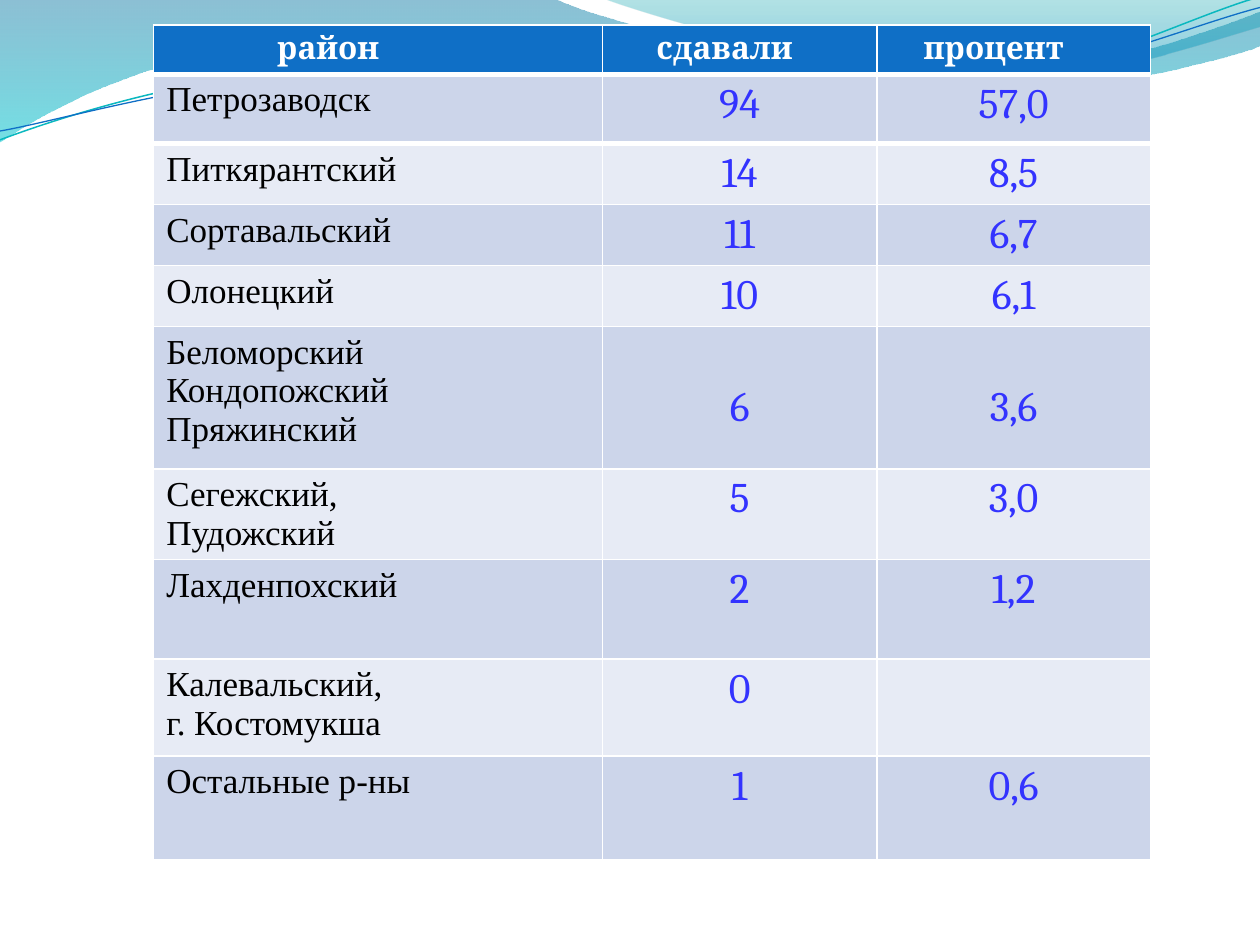
from dataclasses import dataclass
from math import cos, radians, sin
from typing import Optional

from lxml.etree import SubElement
from pptx import Presentation
from pptx.dml.color import RGBColor
from pptx.enum.text import PP_ALIGN
from pptx.oxml import parse_xml
from pptx.oxml.ns import nsdecls, qn
from pptx.util import Inches, Pt

WHITE = RGBColor(0xFF, 0xFF, 0xFF)
BLACK = RGBColor(0, 0, 0)
BLUE = RGBColor(0x0F, 0x6F, 0xC6)
TEAL = RGBColor(0x0A, 0xB8, 0xBF)
NUMBER = RGBColor(0x33, 0x33, 0xFF)
BANDS = (RGBColor(0xCC, 0xD5, 0xEA), RGBColor(0xE7, 0xEB, 0xF5))


@dataclass
class Stop:
    position: float
    color: RGBColor
    opacity: int


@dataclass
class Wave:
    start: tuple
    segments: list
    stops: tuple = ()
    line: Optional[RGBColor] = None
    width: float = 0
    rotation: float = 0
    center: tuple = (0, 0)


@dataclass
class District:
    names: str
    count: str
    percent: str
    height: float
    number_top: float = 0.05


WAVES = [
    Wave((0, 0), [
        (4.4, -0.01),
        (4.76, 0.17, 6.64, 0.63, 7.58, 0.63), (8.53, 0.63, 9.58, 0.26, 10, 0.09),
        (10.01, 0.36),
        (9.83, 0.44, 8.7, 0.76, 7.46, 0.75), (6.22, 0.75, 3.82, 0.28, 2.57, 0.34),
        (1.29, 0.36, 0.46, 0.83, -0.01, 1.13),
        (0, 0),
    ], stops=(Stop(0, RGBColor(0, 0x74, 0xA1), 45), Stop(1, RGBColor(0, 0xC6, 0xCF), 55))),
    Wave((4.79, -0.01), [
        (5.09, 0.11, 6.82, 0.62, 7.69, 0.65), (8.56, 0.69, 9.61, 0.32, 10, 0.21),
        (10, 0), (4.79, -0.01),
    ], stops=(Stop(0, RGBColor(0, 0xA1, 0xA9), 30), Stop(0.8, RGBColor(0, 0x8B, 0xBF), 45))),
    Wave((0, 1.11), [
        (0.48, 0.93, 1.58, 0.57, 2.77, 0.52), (3.95, 0.47, 5.93, 0.89, 7.13, 0.8),
        (8.33, 0.71, 9.38, 0.15, 9.98, -0.02),
    ], line=TEAL, width=0.85, rotation=357.3, center=(4.99, 0.58)),
    Wave((0, 1.04), [
        (0.47, 0.96, 1.64, 0.61, 2.83, 0.56), (4.03, 0.51, 5.97, 0.84, 7.17, 0.75),
        (8.36, 0.67, 9.41, 0.21, 10, 0.06),
    ], line=BLUE, width=0.75, rotation=357.3, center=(5, 0.59)),
]

COLUMN_WIDTHS = (3.56, 2.18, 2.17)
HEADERS = (("район", 0.98), ("сдавали", 0.43), ("процент", 0.37))
HEADER_HEIGHT = 0.39
DISTRICTS = [
    District("Петрозаводск", "94", "57,0", 0.55),
    District("Питкярантский", "14", "8,5", 0.48),
    District("Сортавальский", "11", "6,7", 0.48),
    District("Олонецкий", "10", "6,1", 0.48),
    District("Беломорский\nКондопожский\nПряжинский", "6", "3,6", 1.13, 0.45),
    District("Сегежский,\nПудожский", "5", "3,0", 0.72),
    District("Лахденпохский", "2", "1,2", 0.79),
    District("Калевальский,\nг. Костомукша", "0", "", 0.77),
    District("Остальные р-ны", "1", "0,6", 0.82),
]


def unrotated(wave: Wave, x: float, y: float) -> tuple:
    angle = radians(-wave.rotation)
    cx, cy = wave.center
    dx, dy = x - cx, y - cy
    return (Inches(cx + dx * cos(angle) - dy * sin(angle)),
            Inches(cy + dx * sin(angle) + dy * cos(angle)))


def bend(sp, segments: list) -> None:
    outline = next(sp._element.iter(qn("a:path")))
    lines = iter(outline.findall(qn("a:lnTo")))
    for segment in segments:
        first = next(lines)
        if len(segment) == 6:
            curve = parse_xml(f"<a:cubicBezTo {nsdecls('a')}/>")
            first.addprevious(curve)
            for line in (first, next(lines), next(lines)):
                curve.append(line[0])
                outline.remove(line)


def draw_wave(s, wave: Wave) -> None:
    points = [unrotated(wave, *segment[i:i + 2])
              for segment in wave.segments for i in range(0, len(segment), 2)]
    builder = s.shapes.build_freeform(*unrotated(wave, *wave.start))
    builder.add_line_segments(points, close=bool(wave.stops))
    sp = builder.convert_to_shape()
    bend(sp, wave.segments)
    sp.rotation = wave.rotation
    sp.shadow.inherit = False
    if not wave.stops:
        sp.fill.background()
        sp.line.color.rgb = wave.line
        sp.line.width = Pt(wave.width)
        return
    sp.line.fill.background()
    sp.fill.gradient()
    sp.fill.gradient_angle = 270
    for target, stop in zip(sp.fill.gradient_stops, wave.stops):
        target.position = stop.position
        target.color.rgb = stop.color
    colors = sp._element.spPr.find(qn("a:gradFill")).iter(qn("a:srgbClr"))
    for color, stop in zip(colors, wave.stops):
        SubElement(color, qn("a:alpha")).set("val", str(stop.opacity * 1000))


def set_border(cell, side: str, width: float) -> None:
    cell._tc.get_or_add_tcPr().insert(0, parse_xml(
        f'<a:{side} {nsdecls("a")} w="{Pt(width)}"><a:solidFill>'
        f'<a:srgbClr val="{WHITE}"/></a:solidFill></a:{side}>'))


def write_cell(cell, text: str, *, fill: RGBColor, color: RGBColor, size: float,
               font: str = "Cambria", bold: bool = False, align=PP_ALIGN.LEFT,
               left: float = 0.1, top: float = 0.05) -> None:
    cell.fill.solid()
    cell.fill.fore_color.rgb = fill
    cell.margin_left = Inches(left)
    cell.margin_top = Inches(top)
    if not text:
        return
    tf = cell.text_frame
    for i, line in enumerate(text.split("\n")):
        p = tf.add_paragraph() if i else tf.paragraphs[0]
        p.alignment = align
        r = p.add_run()
        r.text = line
        r.font.name = font
        r.font.size = Pt(size)
        r.font.bold = bold
        r.font.color.rgb = color


def draw_table(s) -> None:
    heights = [HEADER_HEIGHT] + [d.height for d in DISTRICTS]
    table = s.shapes.add_table(
        len(heights), len(COLUMN_WIDTHS), Inches(1.22), Inches(0.2),
        Inches(sum(COLUMN_WIDTHS)), Inches(sum(heights)),
    ).table
    for column, width in zip(table.columns, COLUMN_WIDTHS):
        column.width = Inches(width)
    for row, height in zip(table.rows, heights):
        row.height = Inches(height)
    for col, (title, left) in enumerate(HEADERS):
        write_cell(table.cell(0, col), title, fill=BLUE, color=WHITE, size=18,
                   bold=True, left=left)
        set_border(table.cell(0, col), "lnB", 3)
        set_border(table.cell(1, col), "lnT", 3)
    for row, district in enumerate(DISTRICTS, start=1):
        band = BANDS[(row - 1) % 2]
        write_cell(table.cell(row, 0), district.names, fill=band, color=BLACK,
                   size=20, font="Times New Roman")
        for col, value in enumerate((district.count, district.percent), start=1):
            write_cell(table.cell(row, col), value, fill=band, color=NUMBER, size=24,
                       align=PP_ALIGN.CENTER, top=district.number_top)


def main() -> None:
    prs = Presentation()
    prs.slide_width, prs.slide_height = Inches(10), Inches(7.5)
    s = prs.slides.add_slide(prs.slide_layouts[6])
    s.background.fill.solid()
    s.background.fill.fore_color.rgb = WHITE
    for wave in WAVES:
        draw_wave(s, wave)
    draw_table(s)
    prs.save("out.pptx")


if __name__ == "__main__":
    main()
